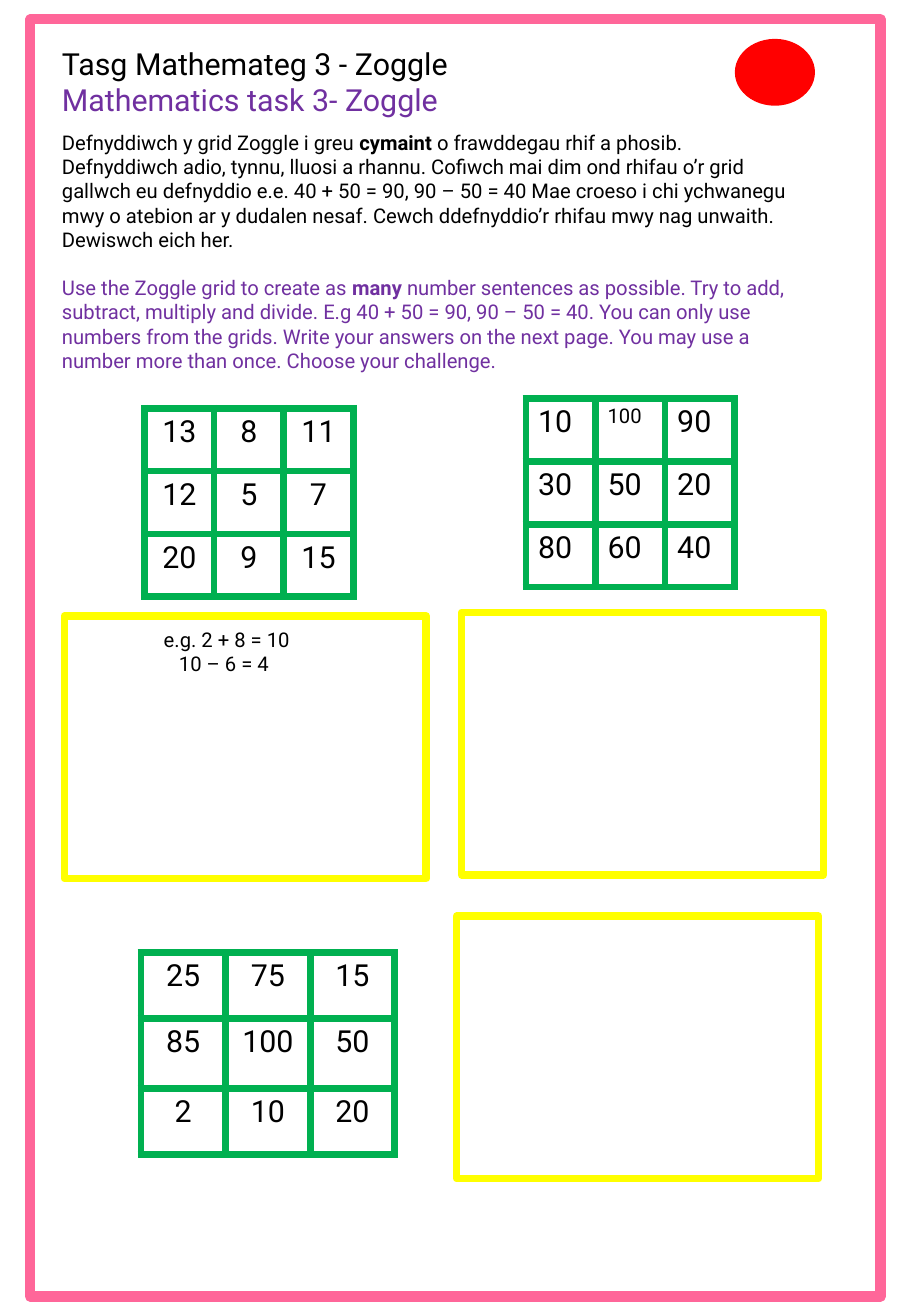
from pptx import Presentation
from pptx.dml.color import RGBColor
from pptx.enum.shapes import MSO_SHAPE
from pptx.enum.text import MSO_ANCHOR, MSO_AUTO_SIZE, PP_ALIGN
from pptx.oxml import parse_xml
from pptx.oxml.ns import nsdecls
from pptx.util import Inches, Pt

RECTANGLE, OVAL = MSO_SHAPE.RECTANGLE, MSO_SHAPE.OVAL
TOP, NO_FIT = MSO_ANCHOR.TOP, MSO_AUTO_SIZE.NONE
LEFT, CENTER = PP_ALIGN.LEFT, PP_ALIGN.CENTER
FONT = "Roboto"
COLORS = {
    "welsh": "000000",
    "english": "7030A0",
    "frame": "FF6699",
    "grid": "00B050",
    "answer": "FFFF00",
    "marker": "FF0000",
}
COLUMNS, ROWS = 75, 108.3
UNIT = Inches(0.1)
BORDER_WIDTH = 4.5


def units(*counts):
    return [round(count * UNIT) for count in counts]


def color(name):
    return RGBColor.from_string(COLORS[name])


def write(paragraph, text, size=12, tint="welsh", align=LEFT, indent=0, before=0):
    properties = paragraph._p.get_or_add_pPr()
    properties.set("marL", str(Pt(indent)))
    properties.set("indent", "0")
    properties.append(parse_xml(f"<a:buNone {nsdecls('a')}/>"))
    paragraph.alignment = align
    paragraph.space_before = Pt(before)
    for index, part in enumerate(text.split("**")):
        run = paragraph.add_run()
        run.text = part
        run.font.name = FONT
        run.font.size = Pt(size)
        run.font.bold = index % 2 == 1
        run.font.color.rgb = color(tint)


class Worksheet:
    def __init__(self, presentation):
        self.slide = presentation.slides.add_slide(presentation.slide_layouts[1])
        self.shapes = self.slide.shapes

    def fill_text(self, shape, paragraphs, wrap=True):
        frame = shape.text_frame
        frame.word_wrap = wrap
        frame.auto_size = NO_FIT
        frame.vertical_anchor = TOP
        for index, (text, style) in enumerate(paragraphs):
            paragraph = frame.add_paragraph() if index else frame.paragraphs[0]
            write(paragraph, text, **style)

    def placeholder(self, number, area, paragraphs):
        shape = self.slide.placeholders[number]
        shape.left, shape.top, shape.width, shape.height = units(*area)
        self.fill_text(shape, paragraphs)

    def text(self, area, paragraphs):
        self.fill_text(self.shapes.add_textbox(*units(*area)), paragraphs, wrap=False)

    def shape(self, kind, area, fill=None, line=None, width=BORDER_WIDTH):
        shape = self.shapes.add_shape(kind, *units(*area))
        shape.shadow.inherit = False
        if fill:
            shape.fill.solid()
            shape.fill.fore_color.rgb = color(fill)
        else:
            shape.fill.background()
        if line:
            shape.line.color.rgb = color(line)
            shape.line.width = Pt(width)
        else:
            shape.line.fill.background()

    def border(self, cell):
        properties = cell._tc.get_or_add_tcPr()
        for side in "LRTB":
            properties.append(parse_xml(
                f'<a:ln{side} {nsdecls("a")} w="{Pt(BORDER_WIDTH)}"><a:solidFill>'
                f'<a:srgbClr val="{COLORS["grid"]}"/></a:solidFill></a:ln{side}>'))

    def number_grid(self, corner, numbers, column_width, row_heights, align=CENTER, sizes=None):
        sizes = sizes or {}
        area = (*corner, column_width * len(numbers[0]), sum(row_heights))
        table = self.shapes.add_table(len(numbers), len(numbers[0]), *units(*area)).table
        table.first_row = table.horz_banding = False
        for column in table.columns:
            column.width, = units(column_width)
        for row, height, values in zip(table.rows, row_heights, numbers):
            row.height, = units(height)
            for cell, value in zip(row.cells, values):
                self.border(cell)
                cell.fill.background()
                size = sizes.get(value, 18)
                write(cell.text_frame.paragraphs[0], str(value), size=size, align=align)


def main():
    presentation = Presentation()
    presentation.slide_width, presentation.slide_height = units(COLUMNS, ROWS)
    worksheet = Worksheet(presentation)

    worksheet.placeholder(0, (4.1, 3.2, 42.3, 7.1), [
        ("Tasg Mathemateg 3 - Zoggle", {"size": 18}),
        ("Mathematics task 3- Zoggle", {"size": 18, "tint": "english"}),
    ])
    worksheet.shape(RECTANGLE, (2.5, 1.6, COLUMNS - 5, ROWS - 3.2), line="frame", width=6)
    worksheet.placeholder(1, (4.1, 10.2, 63, 33.3), [
        ("Defnyddiwch y grid Zoggle i greu **cymaint **o frawddegau rhif a phosib. "
         "Defnyddiwch adio, tynnu, lluosi a rhannu. Cofiwch mai dim ond rhifau o’r grid "
         "gallwch eu defnyddio e.e. 40 + 50 = 90, 90 – 50 = 40 Mae croeso i chi ychwanegu "
         "mwy o atebion ar y dudalen nesaf. Cewch ddefnyddio’r rhifau mwy nag unwaith. "
         "Dewiswch eich her.", {}),
        ("Use the Zoggle grid to create as **many **number sentences as possible. "
         "Try to add, subtract, multiply and divide. E.g 40 + 50 = 90, 90 – 50 = 40. "
         "You can only use numbers from the grids. Write your answers on the next page. "
         "You may use a number more than once. Choose your challenge.",
         {"tint": "english", "before": 14}),
    ])

    small_rows = [5.17] * 3
    worksheet.number_grid((11.6, 78.4), [[25, 75, 15], [85, 100, 50], [2, 10, 20]],
                          6.97, [5.4, 5.8, 5.4])
    worksheet.number_grid((43.3, 32.8), [[10, 100, 90], [30, 50, 20], [80, 60, 40]],
                          5.73, small_rows, align=LEFT, sizes={100: 12})
    worksheet.number_grid((11.9, 33.6), [[13, 8, 11], [12, 5, 7], [20, 9, 15]],
                          5.73, small_rows)

    for corner in ((5.3, 50.7), (38, 50.4), (37.6, 75.4)):
        worksheet.shape(RECTANGLE, (*corner, 29.8, 21.6), line="answer")
    worksheet.text((12.5, 51.1, 15.3, 5), [
        ("e.g. 2 + 8 = 10", {}),
        ("10 – 6 = 4", {"indent": 9}),
    ])
    worksheet.shape(OVAL, (60.5, 3.2, 6.6, 5.5), fill="marker")
    presentation.save("out.pptx")


if __name__ == "__main__":
    main()
